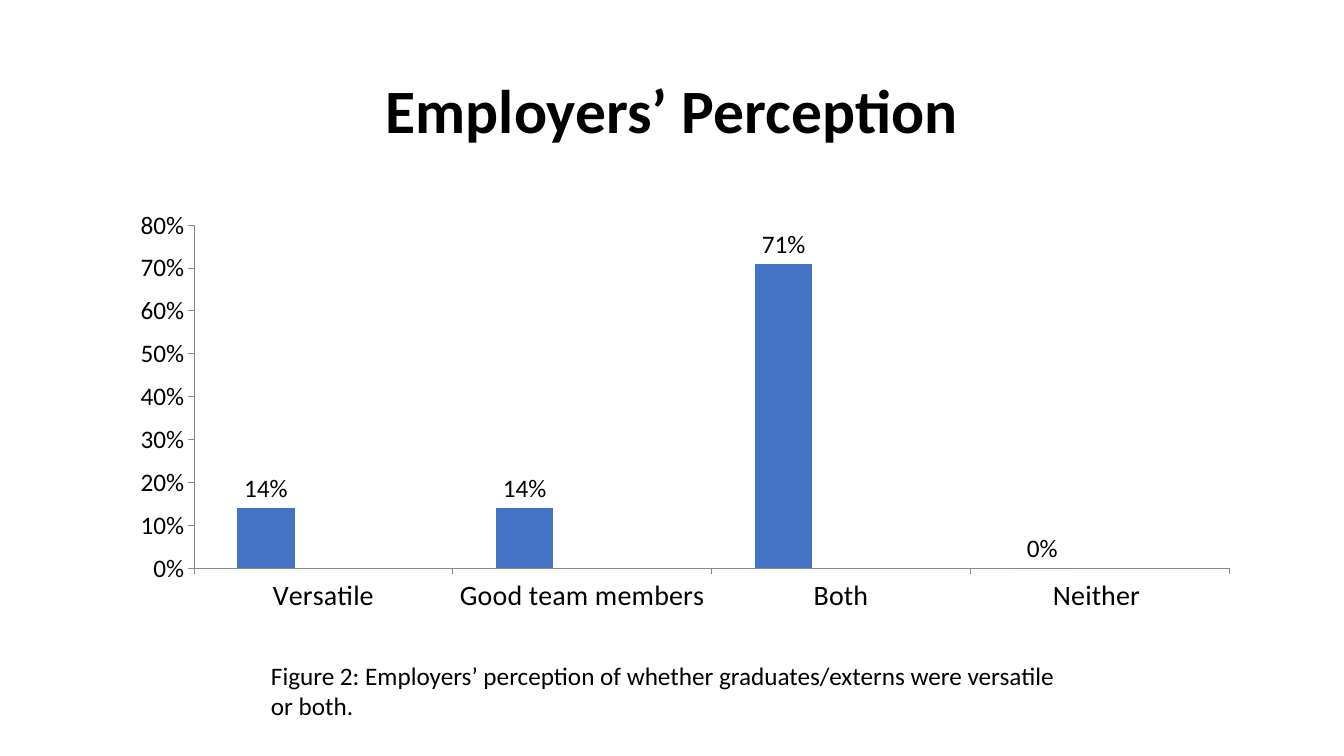
from dataclasses import dataclass

from pptx import Presentation
from pptx.chart.data import CategoryChartData
from pptx.dml.color import RGBColor
from pptx.enum.chart import XL_CHART_TYPE as ChartType
from pptx.enum.chart import XL_LABEL_POSITION as LabelPosition
from pptx.enum.chart import XL_TICK_MARK as TickMark
from pptx.enum.text import MSO_ANCHOR as Anchor
from pptx.enum.text import PP_ALIGN as Align
from pptx.util import Cm, Pt


@dataclass(frozen=True)
class Theme:
    """Colours, font and type sizes of the slide."""
    font: str = "Calibri"
    ink: str = "000000"
    axis: str = "898989"
    series: tuple = ("4472C4", "ED7D31", "A5A5A5")
    title: int = 44
    category: int = 20
    body: int = 18
    chart: int = 10


THEME = Theme()
CATEGORIES = ("Versatile", "Good team members", "Both", "Neither ")
SHARES = (0.14, 0.14, 0.71, 0)
PERCENT = "0%"


def style_font(font, size, bold=False):
    """Apply the theme font at the given size."""
    font.name = THEME.font
    font.size = Pt(size)
    font.bold = bold
    font.color.rgb = RGBColor.from_string(THEME.ink)


def add_text(page, box, text, size, bold=False, align=Align.LEFT,
             anchor=Anchor.TOP, spacing=1.0):
    """Place one wrapped paragraph in the box."""
    frame = page.shapes.add_textbox(*map(Cm, box)).text_frame
    frame.word_wrap = True
    frame.vertical_anchor = anchor
    para = frame.paragraphs[0]
    para.alignment = align
    para.line_spacing = spacing
    span = para.add_run()
    span.text = text
    style_font(span.font, size, bold)


def style_axis(axis, size):
    """Give an axis its line, outside ticks and label size."""
    axis.has_major_gridlines = False
    axis.major_tick_mark = TickMark.OUTSIDE
    axis.minor_tick_mark = TickMark.NONE
    axis.format.line.color.rgb = RGBColor.from_string(THEME.axis)
    axis.format.line.width = Pt(0.75)
    style_font(axis.tick_labels.font, size)


def add_perception_chart(page, box):
    """Draw the column chart of employer answers in the box."""
    data = CategoryChartData(number_format=PERCENT)
    data.categories = CATEGORIES
    data.add_series("Series 1", SHARES)
    for name in ("Series 2", "Series 3"):
        data.add_series(name, [None] * len(CATEGORIES))
    chart = page.shapes.add_chart(
        ChartType.COLUMN_CLUSTERED, *map(Cm, box), data).chart
    chart.has_legend = False
    chart.has_title = False
    style_font(chart.font, THEME.chart)

    style_axis(chart.category_axis, THEME.category)
    values = chart.value_axis
    style_axis(values, THEME.body)
    values.minimum_scale, values.maximum_scale, values.major_unit = 0, 0.8, 0.1
    values.tick_labels.number_format = PERCENT
    values.tick_labels.number_format_is_linked = False

    plot = chart.plots[0]
    plot.vary_by_categories = False
    plot.gap_width = 150
    plot.overlap = 0
    for series, color in zip(plot.series, THEME.series):
        series.format.fill.solid()
        series.format.fill.fore_color.rgb = RGBColor.from_string(color)

    labels = plot.series[0].data_labels
    labels.show_value = True
    labels.position = LabelPosition.OUTSIDE_END
    labels.number_format = PERCENT
    labels.number_format_is_linked = False
    style_font(labels.font, THEME.body)


def add_perception_slide(deck):
    """Add the slide with its title, chart and caption."""
    page = deck.slides.add_slide(deck.slide_layouts[6])
    add_text(page, (2.33, 1.01, 29.21, 3.68), "Employers’ Perception",
             THEME.title, bold=True, align=Align.CENTER,
             anchor=Anchor.MIDDLE, spacing=0.9)
    add_perception_chart(page, (2.97, 5.08, 28.58, 10.57))
    add_text(page, (6.58, 16.51, 20.8, 1.8),
             "Figure 2: Employers’ perception of whether graduates/externs "
             "were versatile or both.", THEME.body)


def main():
    """Build and save the deck."""
    deck = Presentation()
    deck.slide_width, deck.slide_height = Cm(33.87), Cm(19.05)
    add_perception_slide(deck)
    deck.save("out.pptx")


if __name__ == "__main__":
    main()
